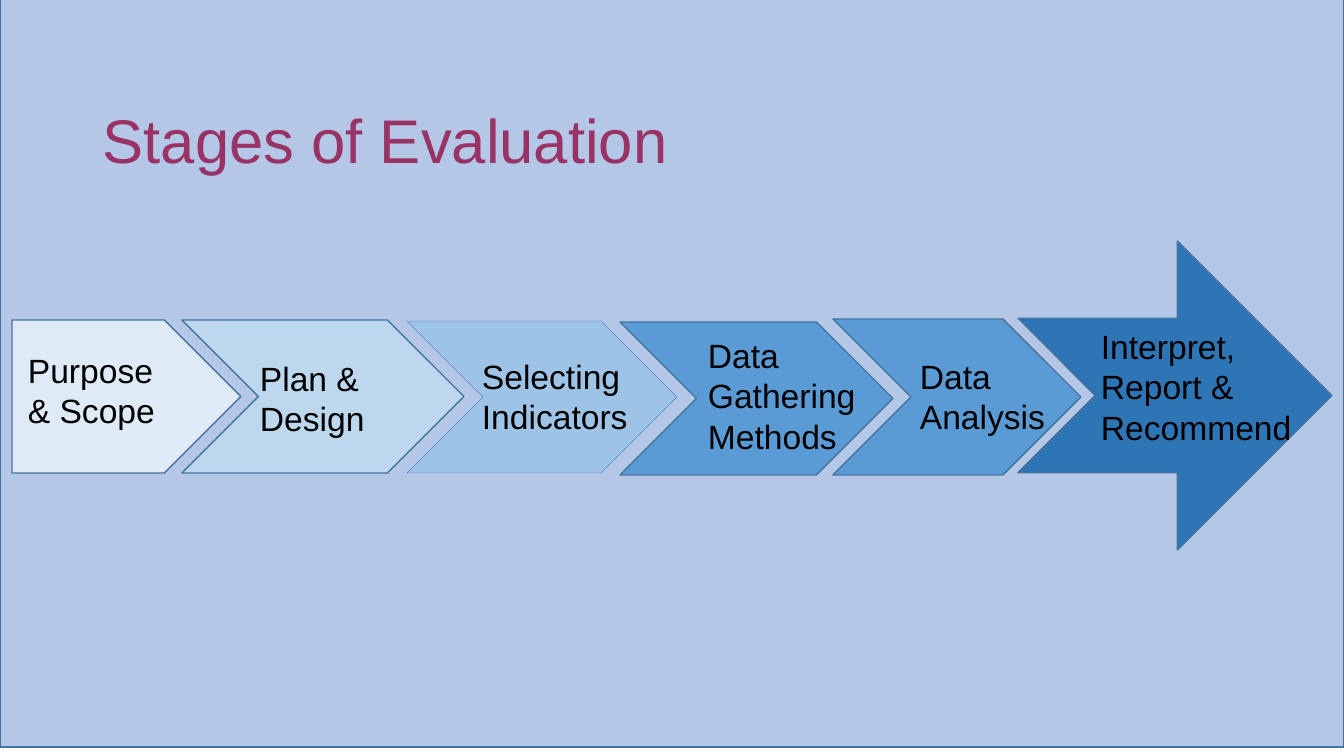
import pptx
import pptx.util
import pptx.dml.color
import pptx.enum.shapes
import pptx.enum.text

PX = 914400 / 100.8
SHAPES = pptx.enum.shapes.MSO_SHAPE
ANCHORS = pptx.enum.text.MSO_ANCHOR


def color(value):
    return pptx.dml.color.RGBColor.from_string(value)


def add_text(text, box, size=24, ink="000000", anchor=ANCHORS.TOP, spacing=1.0):
    frame = slide.shapes.add_textbox(*[round(v * PX) for v in box]).text_frame
    frame.word_wrap = True
    frame.vertical_anchor = anchor
    paragraph = frame.paragraphs[0]
    paragraph.line_spacing = spacing
    run = paragraph.add_run()
    run.text = text
    run.font.name = "Arial"
    run.font.size = pptx.util.Pt(size)
    run.font.color.rgb = color(ink)


deck = pptx.Presentation()
deck.slide_width = round(1344 * PX)
deck.slide_height = round(756 * PX)
slide = deck.slides.add_slide(deck.slide_layouts[6])

EDGE = "43739E"
panels = [
    (SHAPES.RECTANGLE, (0, -9, 1344, 756), "B4C7E7", EDGE, 1),
    (SHAPES.PENTAGON, (12, 320, 229, 153), "DEEBF7", EDGE, 1),
    (SHAPES.CHEVRON, (182, 320, 282, 153), "BDD7EE", EDGE, 1),
    (SHAPES.CHEVRON, (407, 321, 270, 152), "9DC3E6", "4472C4", 0.25),
    (SHAPES.CHEVRON, (620, 322, 273, 153), "5B9BD5", EDGE, 1),
    (SHAPES.CHEVRON, (833, 319, 248, 156), "5B9BD5", EDGE, 1),
    (SHAPES.NOTCHED_RIGHT_ARROW, (1018, 241, 314, 309), "2E75B6", EDGE, 1),
]
for kind, box, fill, edge, weight in panels:
    panel = slide.shapes.add_shape(kind, *[round(v * PX) for v in box])
    panel.shadow.inherit = False
    panel.fill.solid()
    panel.fill.fore_color.rgb = color(fill)
    panel.line.color.rgb = color(edge)
    panel.line.width = pptx.util.Pt(weight)

add_text("Stages of Evaluation", (93, 71, 1159, 146), size=44, ink="993366",
         anchor=ANCHORS.MIDDLE, spacing=0.9)

stages = [
    ("Purpose & Scope", (18, 345, 172, 92)),
    ("Plan & Design", (250, 353, 174, 92)),
    ("Selecting Indicators", (472, 351, 213, 92)),
    ("Data Gathering Methods", (698, 330, 213, 132)),
    ("Data Analysis", (910, 351, 209, 92)),
    ("Interpret, Report & Recommend", (1091, 321, 213, 132)),
]
for stage, box in stages:
    add_text(stage, box)

deck.save("out.pptx")
